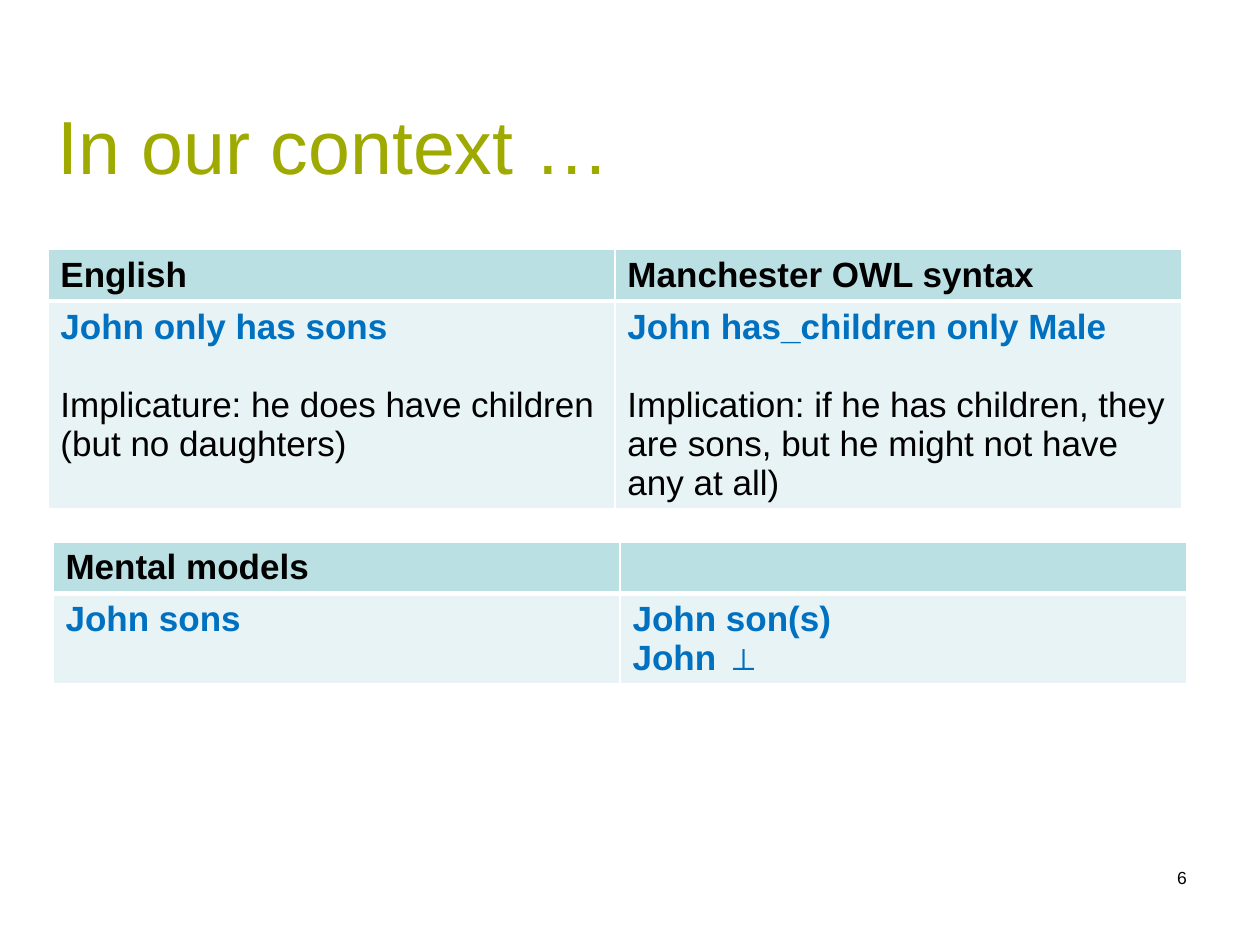
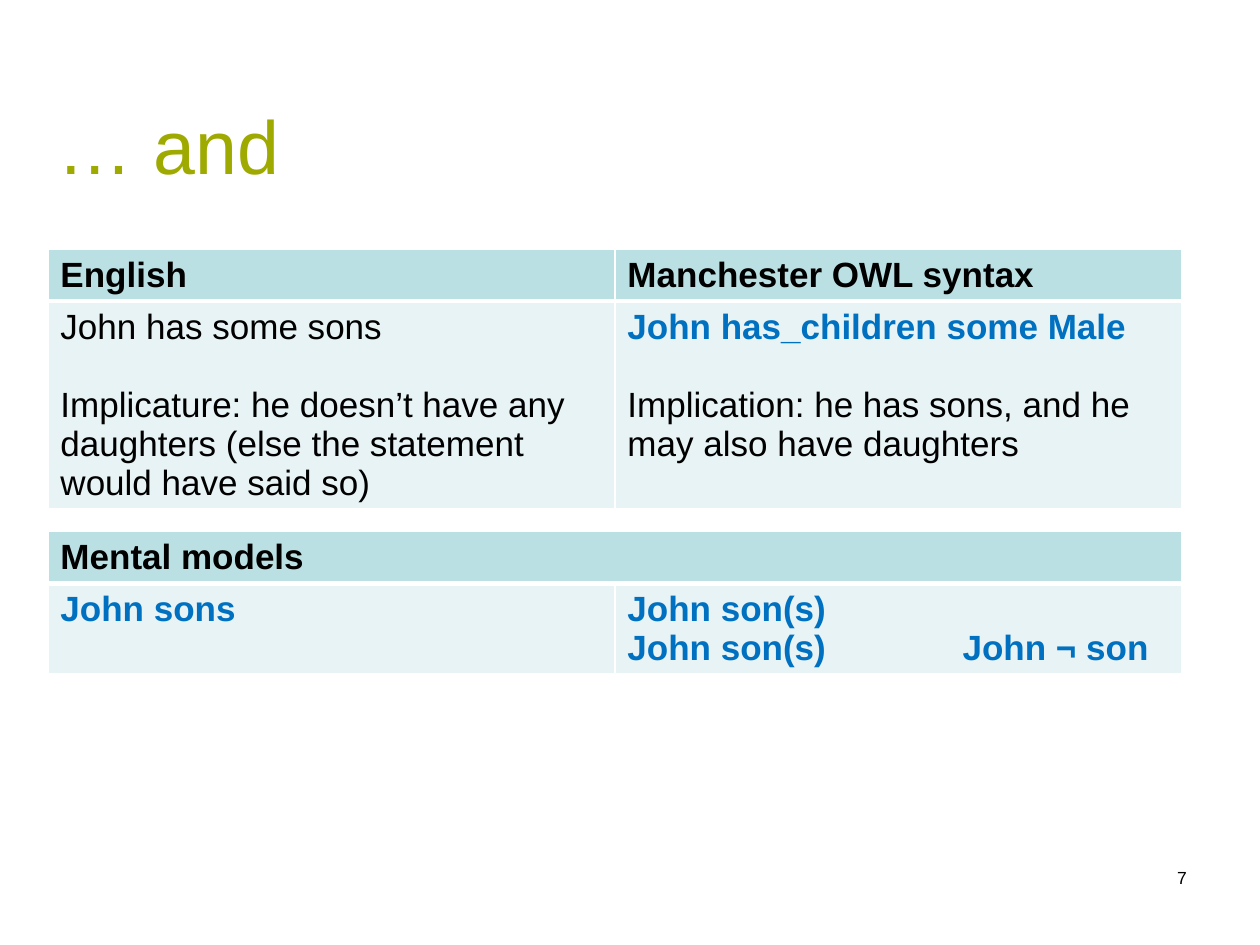
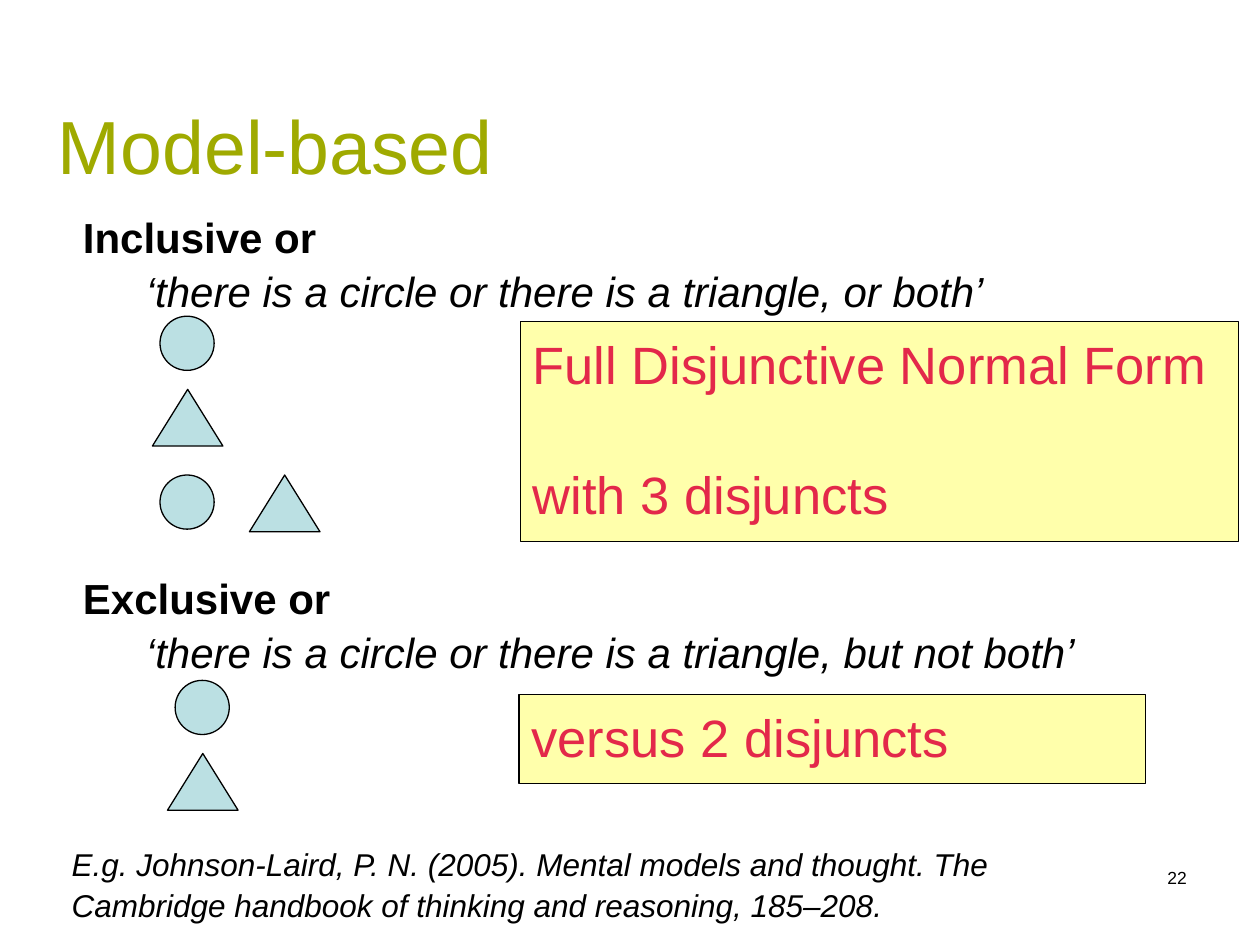
from dataclasses import dataclass
from typing import Optional

from pptx import Presentation
from pptx.dml.color import RGBColor
from pptx.enum import shapes, text
from pptx.oxml.ns import qn
from pptx.util import Inches, Pt
from lxml import etree

FONT = "Arial"
BLACK = RGBColor(0x00, 0x00, 0x00)
OLIVE = RGBColor(0x9F, 0xAA, 0x00)
BLUE = RGBColor(0x00, 0x70, 0xC0)
RED = RGBColor(0xE3, 0x28, 0x4A)
TEAL = RGBColor(0xBB, 0xE0, 0xE3)
PALE_TEAL = RGBColor(0xE7, 0xF3, 0xF4)
YELLOW = RGBColor(0xFF, 0xFF, 0xAB)
WHITE = RGBColor(0xFF, 0xFF, 0xFF)

LINE_SPACING = 1.07
TABLE_SIZE = 20
TABLE_GAP = 22.3
COLUMN_WIDTH = 4.5
HEADER_HEIGHT = 0.41
OVAL = shapes.MSO_SHAPE.OVAL
TRIANGLE = shapes.MSO_SHAPE.ISOSCELES_TRIANGLE
SYMBOL_SIZES = {OVAL: (0.43, 0.43), TRIANGLE: (0.56, 0.45)}


@dataclass(frozen=True)
class Line:
    text: str
    color: RGBColor = BLACK
    bold: bool = False
    italic: bool = False
    gap: float = 0
    indent: float = 0
    tab: Optional[float] = None


@dataclass(frozen=True)
class Grid:
    left: float
    top: float
    body_height: float
    headers: tuple[str, ...]
    body: tuple[list[Line], ...]


@dataclass(frozen=True)
class Symbol:
    kind: shapes.MSO_SHAPE
    left: float
    top: float


def write(tf, lines: list[Line], size: float, spacing: float = LINE_SPACING,
          align=text.PP_ALIGN.LEFT, anchor=text.MSO_ANCHOR.TOP,
          inset: tuple[float, float] = (0.1, 0.05)) -> None:
    tf.word_wrap = True
    tf.auto_size = text.MSO_AUTO_SIZE.NONE
    tf.vertical_anchor = anchor
    tf.margin_left = tf.margin_right = Inches(inset[0])
    tf.margin_top = tf.margin_bottom = Inches(inset[1])
    write_lines(tf, lines, size, spacing, align)


def write_lines(tf, lines: list[Line], size: float, spacing: float = 1.0,
                align=text.PP_ALIGN.LEFT) -> None:
    for i, line in enumerate(lines):
        p = tf.paragraphs[0] if i == 0 else tf.add_paragraph()
        p.alignment = align
        p.line_spacing = spacing
        p.space_before = Pt(line.gap)
        if line.indent:
            p._p.get_or_add_pPr().set("marL", str(Inches(line.indent)))
        if line.tab:
            tabs = etree.SubElement(p._p.get_or_add_pPr(), qn("a:tabLst"))
            etree.SubElement(tabs, qn("a:tab"), pos=str(Inches(line.tab)), algn="l")
        r = p.add_run()
        r.text = line.text
        r.font.name = FONT
        r.font.size = Pt(size)
        r.font.bold = line.bold
        r.font.italic = line.italic
        r.font.color.rgb = line.color


def add_text(s, lines: list[Line], left: float, top: float, width: float,
             height: float, size: float, **fmt) -> None:
    sp = s.shapes.add_textbox(Inches(left), Inches(top), Inches(width), Inches(height))
    write(sp.text_frame, lines, size, **fmt)


def add_filled(s, kind, left: float, top: float, width: float, height: float,
               fill: RGBColor):
    sp = s.shapes.add_shape(kind, Inches(left), Inches(top), Inches(width), Inches(height))
    sp.shadow.inherit = False
    sp.fill.solid()
    sp.fill.fore_color.rgb = fill
    sp.line.color.rgb = BLACK
    sp.line.width = Pt(0.75)
    return sp


def add_callout(s, lines: list[Line], left: float, top: float, width: float,
                height: float) -> None:
    sp = add_filled(s, shapes.MSO_SHAPE.RECTANGLE, left, top, width, height, YELLOW)
    write(sp.text_frame, lines, 30)


def add_symbol(s, symbol: Symbol) -> None:
    add_filled(s, symbol.kind, symbol.left, symbol.top, *SYMBOL_SIZES[symbol.kind], TEAL)


def paint_cell(cell, fill: RGBColor, top: float, bottom: float) -> None:
    cell.fill.solid()
    cell.fill.fore_color.rgb = fill
    tcPr = cell._tc.get_or_add_tcPr()
    edges = {"a:lnL": 1, "a:lnR": 1, "a:lnT": top, "a:lnB": bottom}
    for i, (tag, width) in enumerate(edges.items()):
        ln = etree.Element(qn(tag), w=str(Pt(width)))
        solid = etree.SubElement(ln, qn("a:solidFill"))
        etree.SubElement(solid, qn("a:srgbClr"), val=str(WHITE))
        tcPr.insert(i, ln)


def add_grid(s, grid: Grid) -> None:
    columns = len(grid.body)
    table = s.shapes.add_table(
        2, columns, Inches(grid.left), Inches(grid.top),
        Inches(COLUMN_WIDTH * columns), Inches(HEADER_HEIGHT + grid.body_height)).table
    table.rows[0].height = Inches(HEADER_HEIGHT)
    table.rows[1].height = Inches(grid.body_height)
    for i in range(columns):
        paint_cell(table.cell(0, i), TEAL, 1, 3)
        paint_cell(table.cell(1, i), PALE_TEAL, 3, 1)
        write_lines(table.cell(1, i).text_frame, grid.body[i], TABLE_SIZE)
    for i, header in enumerate(grid.headers):
        write_lines(table.cell(0, i).text_frame, [Line(header, bold=True)], TABLE_SIZE)
    if len(grid.headers) < columns:
        table.cell(0, 0).merge(table.cell(0, columns - 1))


def add_slide(prs, title: str, number: int):
    s = prs.slides.add_slide(prs.slide_layouts[5])
    sp = s.shapes.title
    sp.left, sp.top, sp.width, sp.height = (Inches(v) for v in (0.38, 0.72, 7.98, 0.8))
    write(sp.text_frame, [Line(title, OLIVE)], 43,
          anchor=text.MSO_ANCHOR.MIDDLE, inset=(0.08, 0.04))
    add_text(s, [Line(str(number))], 7.16, 6.83, 2.34, 0.52, 10,
             align=text.PP_ALIGN.RIGHT, inset=(0.08, 0.04))
    return s


def key(content: str, tab: Optional[float] = None) -> Line:
    return Line(content, BLUE, bold=True, tab=tab)


def syntax_grid(english: Line, implicature: str, owl: str, implication: str) -> Grid:
    return Grid(0.38, 1.98, 1.64, ("English", "Manchester OWL syntax"),
                ([english, Line(implicature, gap=TABLE_GAP)],
                 [key(owl), Line(implication, gap=TABLE_GAP)]))


def models_grid(left: float, top: float, headers: tuple[str, ...], last: Line) -> Grid:
    return Grid(left, top, 0.71, headers,
                ([key("John sons")], [key("John son(s)"), last]))


def add_disjunction(s, heading: str, example: str, top: float, width: float) -> None:
    lines = [Line(heading, bold=True), Line(example, italic=True, indent=0.5)]
    add_text(s, lines, 0.56, top, width, 0.91, 24)


def build_context(prs) -> None:
    s = add_slide(prs, "In our context …", 6)
    add_grid(s, syntax_grid(
        key("John only has sons"),
        "Implicature: he does have children (but no daughters)",
        "John has_children only Male",
        "Implication: if he has children, they are sons, but he might not have any at all)"))
    add_grid(s, models_grid(0.42, 4.3, ("Mental models", ""), key("John ⊥")))


def build_and(prs) -> None:
    s = add_slide(prs, "… and", 7)
    add_grid(s, syntax_grid(
        Line("John has some sons"),
        "Implicature: he doesn’t have any daughters (else the statement would have said so)",
        "John has_children some Male",
        "Implication: he has sons, and he may also have daughters"))
    add_grid(s, models_grid(0.38, 4.22, ("Mental models",),
                            key("John son(s)\tJohn ¬ son", tab=2.66)))


def build_model_based(prs) -> None:
    s = add_slide(prs, "Model-based", 22)
    add_disjunction(s, "Inclusive or",
                    "‘there is a circle or there is a triangle, or both’", 1.6, 7.8)
    add_disjunction(s, "Exclusive or",
                    "‘there is a circle or there is a triangle, but not both’", 4.47, 8.58)
    for symbol in (Symbol(OVAL, 1.27, 2.51), Symbol(TRIANGLE, 1.21, 3.09),
                   Symbol(OVAL, 1.27, 3.77), Symbol(TRIANGLE, 1.98, 3.77),
                   Symbol(OVAL, 1.39, 5.4), Symbol(TRIANGLE, 1.33, 5.98)):
        add_symbol(s, symbol)
    add_text(s, [Line("E.g. Johnson-Laird, P. N. (2005). Mental models and thought. The "
                      "Cambridge handbook of thinking and reasoning, 185–208.", italic=True)],
             0.47, 6.64, 8.76, 0.71, 18)
    add_callout(s, [Line("Full Disjunctive Normal Form", RED),
                    Line("with 3 disjuncts", RED, gap=36)], 4.13, 2.55, 5.7, 1.75)
    add_callout(s, [Line("versus 2 disjuncts", RED)], 4.12, 5.51, 4.97, 0.71)


def main() -> None:
    prs = Presentation()
    prs.slide_width, prs.slide_height = Inches(10), Inches(7.5)
    build_context(prs)
    build_and(prs)
    build_model_based(prs)
    prs.save("out.pptx")


if __name__ == "__main__":
    main()
